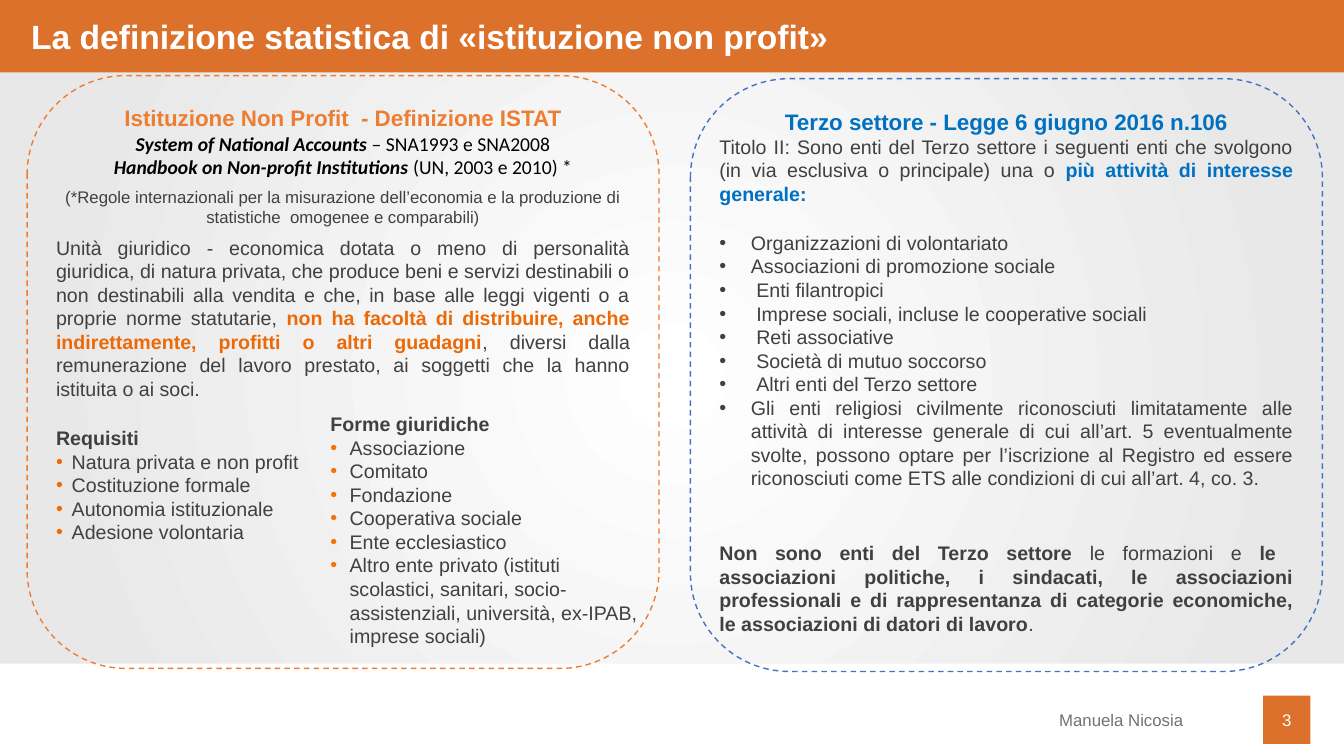
from pptx import Presentation
from pptx.dml.color import RGBColor
from pptx.enum.dml import MSO_LINE
from pptx.enum.shapes import MSO_SHAPE
from pptx.enum.text import MSO_ANCHOR, PP_ALIGN
from pptx.oxml import parse_xml
from pptx.oxml.ns import nsdecls
from pptx.util import Pt

RECT, ROUND = MSO_SHAPE.RECTANGLE, MSO_SHAPE.ROUNDED_RECTANGLE
DASH = MSO_LINE.DASH
TOP, MIDDLE = MSO_ANCHOR.TOP, MSO_ANCHOR.MIDDLE
LEFT, CENTER, RIGHT, JUST = PP_ALIGN.LEFT, PP_ALIGN.CENTER, PP_ALIGN.RIGHT, PP_ALIGN.JUSTIFY

COLORS = {
    "white": "FFFFFF", "black": "000000", "pale": "E8E8E8",
    "band": "DC712B", "orange": "ED7D31", "accent": "EC6907", "bullet": "F37406",
    "edge": "4472C4", "blue": "0070C0", "text": "404040", "gray": "767171",
}
STYLES = {
    "title": ("Arial", 24, "white", True, False),
    "number": ("Arial", 12, "white", False, False),
    "author": ("Arial", 12, "gray", False, False),
    "orange head": ("Arial", 16, "orange", True, False),
    "blue head": ("Arial", 16, "blue", True, False),
    "source": ("Calibri", 14, "black", False, False),
    "work": ("Calibri", 14, "black", True, True),
    "note": ("Arial", 12, "text", False, False),
    "body": ("Arial", 14, "text", False, False),
    "bold": ("Arial", 14, "text", True, False),
    "accent": ("Arial", 14, "accent", True, False),
    "blue": ("Arial", 14, "blue", True, False),
}
GAP = 18.4


class Deck:
    """Draws styled elements on the current slide."""

    def __init__(self):
        self.prs = Presentation()
        self.prs.slide_width, self.prs.slide_height = Pt(960), Pt(540)
        self.slide = self.prs.slides.add_slide(self.prs.slide_layouts[6])

    def backdrop(self, inner, outer):
        stops = "".join(
            f'<a:gs pos="{pos}"><a:srgbClr val="{COLORS[name]}"/></a:gs>'
            for pos, name in ((0, inner), (83000, outer), (100000, outer)))
        back = parse_xml(
            f'<p:bg {nsdecls("p", "a")}><p:bgPr><a:gradFill rotWithShape="1">'
            f'<a:gsLst>{stops}</a:gsLst><a:path path="circle">'
            '<a:fillToRect l="50000" t="50000" r="50000" b="50000"/></a:path>'
            '</a:gradFill><a:effectLst/></p:bgPr></p:bg>')
        self.slide.element.cSld.insert(0, back)

    def frame(self, shape, insets=(7.2, 3.6), anchor=TOP):
        frame = shape.text_frame
        frame.word_wrap = True
        frame.vertical_anchor = anchor
        frame.margin_left = frame.margin_right = Pt(insets[0])
        frame.margin_top = frame.margin_bottom = Pt(insets[1])
        return frame

    def block(self, box, color, insets=(7.2, 3.6), anchor=TOP):
        shape = self.slide.shapes.add_shape(RECT, *map(Pt, box))
        shape.shadow.inherit = False
        shape.fill.solid()
        shape.fill.fore_color.rgb = RGBColor.from_string(COLORS[color])
        shape.line.fill.background()
        return self.frame(shape, insets, anchor)

    def panel(self, box, color):
        shape = self.slide.shapes.add_shape(ROUND, *map(Pt, box))
        shape.shadow.inherit = False
        shape.fill.background()
        shape.line.color.rgb = RGBColor.from_string(COLORS[color])
        shape.line.width = Pt(1)
        shape.line.dash_style = DASH
        return self.frame(shape, (0, 0))

    def label(self, box):
        return self.frame(self.slide.shapes.add_textbox(*map(Pt, box)))

    def para(self, frame, runs, align=LEFT, before=0):
        first = frame.paragraphs[0]
        para = frame.add_paragraph() if first.runs else first
        para.alignment = align
        if before:
            para.space_before = Pt(before)
        for text, style in runs:
            font, size, color, bold, italic = STYLES[style]
            run = para.add_run()
            run.text = text
            run.font.name, run.font.size = font, Pt(size)
            run.font.bold, run.font.italic = bold, italic
            run.font.color.rgb = RGBColor.from_string(COLORS[color])
        return para

    def bullet(self, frame, text, indent, color, align=LEFT, before=0):
        para = self.para(frame, [(text, "body")], align, before)
        props = para._p.get_or_add_pPr()
        props.set("marL", str(Pt(indent)))
        props.set("indent", str(-Pt(indent)))
        for part in (
                f'<a:buClr {nsdecls("a")}><a:srgbClr val="{COLORS[color]}"/></a:buClr>',
                f'<a:buFont {nsdecls("a")} typeface="Arial"/>',
                f'<a:buChar {nsdecls("a")} char="•"/>'):
            props.append(parse_xml(part))


def main():
    deck = Deck()
    deck.backdrop("white", "pale")
    deck.block((0, 474, 960, 66), "white")
    number = deck.block((902.2, 496.8, 33.8, 34.6), "band", anchor=MIDDLE)
    deck.para(number, [("3", "number")], CENTER)
    title = deck.block((0, 0, 960, 51.8), "band", (22.3, 11.5))
    deck.para(title, [("La definizione statistica di «istituzione non profit»", "title")])

    istat = deck.panel((19.4, 54, 451.4, 423.4), "orange")
    deck.para(istat, [("Istituzione Non Profit  - Definizione ISTAT", "orange head")], CENTER)
    deck.para(istat, [("System of National Accounts", "work"),
                      (" – SNA1993 e SNA2008", "source")], CENTER)
    deck.para(istat, [("Handbook on Non-profit Institutions ", "work"),
                      ("(UN, 2003 e 2010) *", "source")], CENTER)
    deck.para(istat, [("(*Regole internazionali per la misurazione dell’economia e la "
                       "produzione di statistiche  omogenee e comparabili)", "note")], CENTER, 6)
    deck.para(istat, [
        ("Unità giuridico - economica dotata o meno di personalità giuridica, di natura "
         "privata, che produce beni e servizi destinabili o non destinabili alla vendita e "
         "che, in base alle leggi vigenti o a proprie norme statutarie, ", "body"),
        ("non ha facoltà di distribuire, anche indirettamente, profitti o altri guadagni",
         "accent"),
        (", diversi dalla remunerazione del lavoro prestato, ai soggetti che la hanno "
         "istituita o ai soci.", "body")], JUST, 6)
    deck.para(istat, [("Requisiti", "bold")], JUST, GAP)
    for need in ("Natura privata e non profit", "Costituzione formale",
                 "Autonomia istituzionale", "Adesione volontaria"):
        deck.bullet(istat, need, 11.2, "accent")

    sector = deck.panel((493.2, 56.2, 451.4, 423.4), "edge")
    deck.para(sector, [("Terzo settore - Legge 6 giugno 2016 n.106", "blue head")], CENTER)
    deck.para(sector, [
        ("Titolo II: Sono enti del Terzo settore i seguenti enti che svolgono (in via "
         "esclusiva o principale) una o ", "body"),
        ("più attività di interesse generale:", "blue")], JUST)
    bodies = (
        ("Organizzazioni di volontariato", 22.5, GAP),
        ("Associazioni di promozione sociale", 22.5, 0),
        ("Enti filantropici", 26.4, 0),
        ("Imprese sociali, incluse le cooperative sociali", 26.4, 0),
        ("Reti associative", 26.4, 0),
        ("Società di mutuo soccorso", 26.4, 0),
        ("Altri enti del Terzo settore", 26.4, 0),
        ("Gli enti religiosi civilmente riconosciuti limitatamente alle attività di "
         "interesse generale di cui all’art. 5 eventualmente svolte, possono optare per "
         "l’iscrizione al Registro ed essere riconosciuti come ETS alle condizioni di cui "
         "all’art. 4, co. 3.", 22.5, 0),
    )
    for text, indent, before in bodies:
        deck.bullet(sector, text, indent, "text", JUST, before)
    deck.para(sector, [
        ("Non sono enti del Terzo settore", "bold"),
        (" le formazioni e ", "body"),
        ("le  associazioni politiche, i sindacati, le associazioni professionali e di "
         "rappresentanza di categorie economiche, le associazioni di datori di lavoro", "bold"),
        (".", "body")], JUST, 2 * GAP)

    forms = deck.label((229, 290.9, 241.9, 177.1))
    deck.para(forms, [("Forme giuridiche", "bold")])
    for form in ("Associazione", "Comitato", "Fondazione", "Cooperativa sociale",
                 "Ente ecclesiastico",
                 "Altro ente privato (istituti scolastici, sanitari, socio-assistenziali, "
                 "università, ex-IPAB, imprese sociali)"):
        deck.bullet(forms, form, 13.7, "bullet")

    author = deck.block((749.5, 503.3, 139, 21.6), "white")
    deck.para(author, [("Manuela Nicosia", "author")])
    deck.prs.save("out.pptx")


if __name__ == "__main__":
    main()
